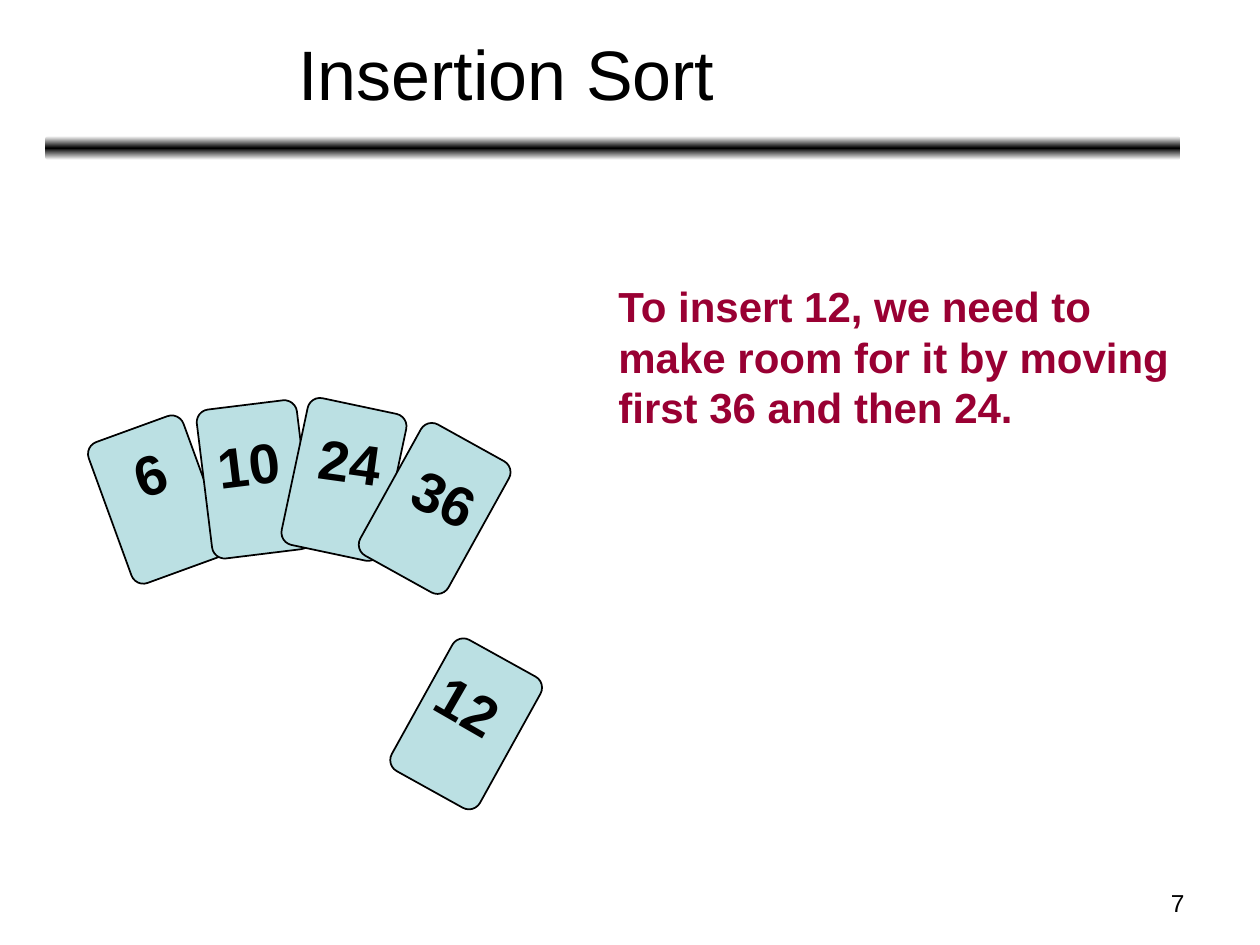
from copy import deepcopy

from pptx import Presentation
from pptx.dml.color import RGBColor
from pptx.enum.shapes import MSO_SHAPE
from pptx.enum.text import MSO_ANCHOR, MSO_AUTO_SIZE, PP_ALIGN
from pptx.util import Inches, Pt

ROUNDED = MSO_SHAPE.ROUNDED_RECTANGLE
CENTER, LEFT, RIGHT = PP_ALIGN.CENTER, PP_ALIGN.LEFT, PP_ALIGN.RIGHT
BLACK, WHITE, CARD_FILL, CALLOUT = "000000", "FFFFFF", "BBE0E3", "990033"

# Content
TITLE = "Insertion Sort"
EXPLANATION = "To insert 12, we need to make room for it by moving first 36 and then 24."
PAGE_NUMBER = "7"

# Cards from back to front: number, card corner and tilt, label corner and tilt
CARDS = [
    ("6", (0.85, 3.37), -20, (0.97, 3.44), -19),
    ("10", (1.62, 3.21), -7, (1.63, 3.36), -7),
    ("24", (2.33, 3.21), 12, (2.44, 3.34), 8),
    ("12", (3.3, 5.15), 29, (3.37, 5.28), 30),
    ("36", (3.05, 3.44), 29, (3.19, 3.63), 25),
]
CARD_SIZE = (0.8, 1.19)
LABEL_HEIGHT = 0.63
LABEL_WIDTHS = {1: 0.45, 2: 0.7}  # by number of digits


def color(value):
    return RGBColor.from_string(value)


def box(*lengths):
    return [Inches(length) for length in lengths]


def write(shape, text, size, font_color=BLACK, bold=False, align=LEFT):
    shape.text_frame.text = text
    paragraph = shape.text_frame.paragraphs[0]
    paragraph.alignment = align
    font_format = {"name": "Arial", "size": Pt(size), "bold": bold}
    for name, value in font_format.items():
        setattr(paragraph.font, name, value)
    paragraph.font.color.rgb = color(font_color)
    return paragraph


def add_text(slide, position, text, size, wrap=True, **text_format):
    shape = slide.shapes.add_textbox(*box(*position))
    shape.text_frame.word_wrap = wrap
    shape.text_frame.auto_size = MSO_AUTO_SIZE.SHAPE_TO_FIT_TEXT
    return shape, write(shape, text, size, **text_format)


def add_rounded(slide, position, corner):
    shape = slide.shapes.add_shape(ROUNDED, *box(*position))
    shape.shadow.inherit = False
    shape.adjustments[0] = corner
    return shape


def add_title_bar(slide):
    bar = add_rounded(slide, (0.36, 1.08, 9.01, 0.19), 0.167)
    bar.line.fill.background()
    bar.fill.gradient()
    bar.fill.gradient_angle = 90
    # The default gradient has two stops; a third makes it symmetric
    stop_list = bar.element.spPr.gradFill.gsLst
    stop_list.append(deepcopy(stop_list[0]))
    for stop, position, value in zip(
        bar.fill.gradient_stops, (0, 0.5, 1), (WHITE, BLACK, WHITE)
    ):
        stop.position = position
        stop.color.rgb = color(value)


def add_card(slide, number, corner, tilt, label_corner, label_tilt):
    card = add_rounded(slide, (*corner, *CARD_SIZE), 0.125)
    card.rotation = tilt
    card.fill.solid()
    card.fill.fore_color.rgb = color(CARD_FILL)
    card.line.color.rgb = color(BLACK)
    card.line.width = Pt(1)
    label_size = (LABEL_WIDTHS[len(number)], LABEL_HEIGHT)
    label, _ = add_text(
        slide, (*label_corner, *label_size), number, 32, wrap=False, bold=True
    )
    label.rotation = label_tilt


def main():
    presentation = Presentation()
    presentation.slide_width, presentation.slide_height = box(10, 7.5)
    slide = presentation.slides.add_slide(presentation.slide_layouts[5])

    # Title and bar below it
    title = slide.shapes.title
    title.left, title.top, title.width, title.height = box(0.56, 0.68, 6.92, 0.28)
    title.text_frame.vertical_anchor = MSO_ANCHOR.BOTTOM
    title.text_frame.auto_size = MSO_AUTO_SIZE.NONE
    write(title, TITLE, 40, align=CENTER)
    add_title_bar(slide)

    # Explanation and page number
    _, paragraph = add_text(
        slide, (4.81, 2.18, 4.66, 1.3), EXPLANATION, 24, font_color=CALLOUT, bold=True
    )
    paragraph.line_spacing = Pt(28.8)
    add_text(slide, (7.17, 7, 2.33, 0.35), PAGE_NUMBER, 14, align=RIGHT)

    # Hand of cards and the card to insert
    for card in CARDS:
        add_card(slide, *card)

    presentation.save("out.pptx")


if __name__ == "__main__":
    main()
